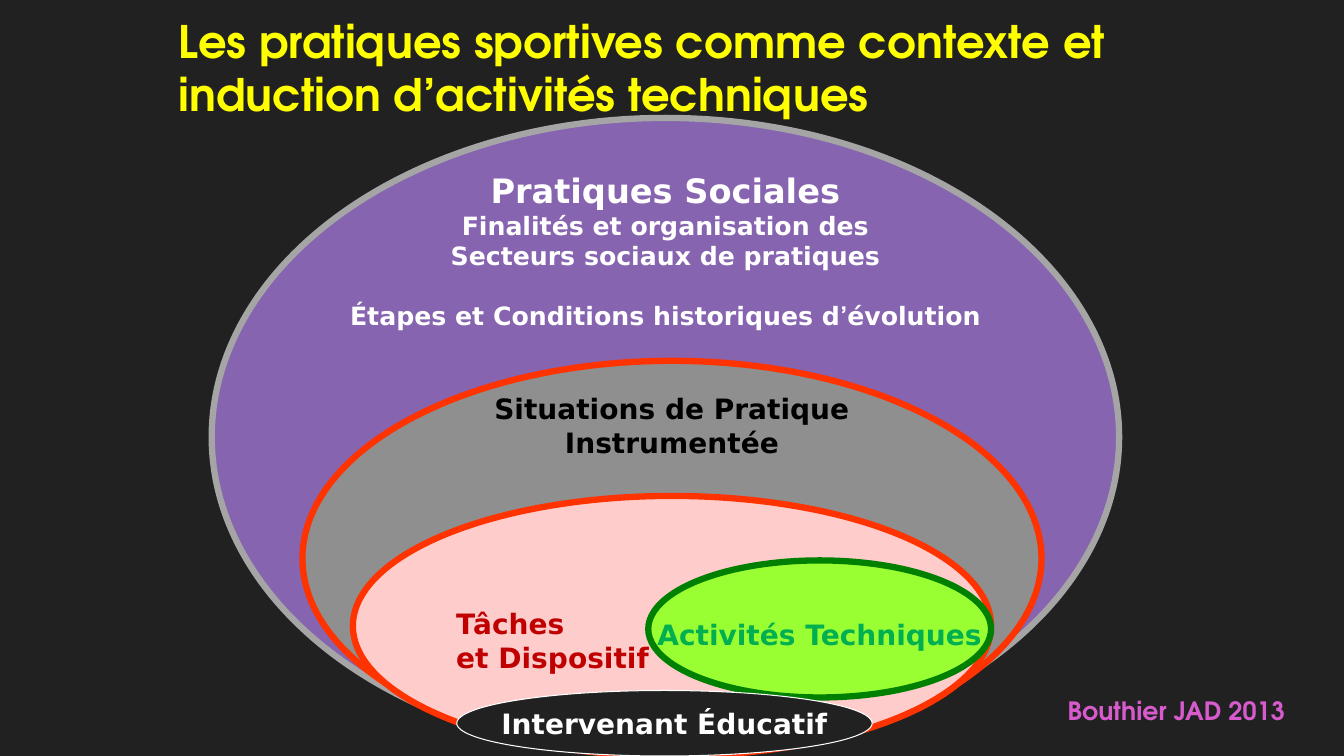
from dataclasses import dataclass

from lxml.etree import SubElement
from pptx import Presentation
from pptx.dml.color import RGBColor
from pptx.enum.shapes import MSO_SHAPE
from pptx.enum.text import MSO_ANCHOR, PP_ALIGN
from pptx.oxml.ns import qn
from pptx.util import Inches, Pt


@dataclass(frozen=True)
class Theme:
    background: str = "212121"
    title: str = "FFFF00"
    credit: str = "D75BCD"
    heading_font: str = "TeX Gyre Adventor"
    label_font: str = "DejaVu Sans"
    title_size: int = 32
    large: int = 24
    medium: int = 20
    small: int = 18
    thick: float = 4.5
    thin: float = 0.75


THEME = Theme()
TITLE = "Les pratiques sportives comme contexte et induction d’activités techniques"
CREDIT = "Bouthier JAD 2013"

# Nested ellipses, back to front. box: left, top, width, height in inches;
# text_y: height of the middle of the label; lines: text, size, space before.
ELLIPSES = [
    dict(box=(2.1, 1.17, 9, 6.33), fill="8664B0", line="A5A5A5", weight=THEME.thick,
         color="FFFFFF", align=PP_ALIGN.CENTER, text_y=2.48,
         lines=[("Pratiques Sociales", THEME.large, 0),
                ("Finalités et organisation des", THEME.small, 0),
                ("Secteurs sociaux de pratiques", THEME.small, 0),
                ("Étapes et Conditions historiques d’évolution", THEME.small, 21)]),
    dict(box=(3, 3.58, 7.33, 3.92), fill="8F8F8F", line="FF3300", weight=THEME.thick,
         color="000000", align=PP_ALIGN.CENTER, text_y=4.22,
         lines=[("Situations de Pratique", THEME.medium, 0),
                ("Instrumentée", THEME.medium, 0)]),
    dict(box=(3.5, 4.92, 6.33, 2.58), fill="FFCCCC", line="FF3300", weight=THEME.thick,
         color="C00000", align=PP_ALIGN.LEFT, text_y=6.35,
         lines=[("Tâches", THEME.medium, 0),
                ("et Dispositif", THEME.medium, 0)]),
    dict(box=(6.43, 5.56, 3.4, 1.36), fill="99FF33", line="008000", weight=THEME.thick,
         color="00B050", align=PP_ALIGN.CENTER, text_y=6.29,
         lines=[("Activités Techniques", THEME.medium, 0)]),
    dict(box=(4.53, 6.85, 4.12, 0.65), fill=THEME.background, line="FFFFFF",
         weight=THEME.thin, color="FFFFFF", align=PP_ALIGN.CENTER, text_y=7.18,
         lines=[("Intervenant Éducatif", THEME.medium, 0)]),
]


def rgb(value):
    return RGBColor.from_string(value)


def style(font, name, size, color):
    font.name, font.size, font.bold = name, Pt(size), True
    font.color.rgb = rgb(color)


def add_text_shadow(run):
    effects = SubElement(run._r.get_or_add_rPr(), qn("a:effectLst"))
    shadow = SubElement(effects, qn("a:outerShdw"), blurRad="38100",
                        dist="38100", dir="2700000", algn="tl")
    SubElement(shadow, qn("a:srgbClr"), val="000000")


def add_title(slide):
    sp = slide.shapes.title
    sp.left, sp.top, sp.width, sp.height = map(Inches, (1.67, 0, 9.5, 1.25))
    tf = sp.text_frame
    tf.text, tf.word_wrap, tf.vertical_anchor = TITLE, True, MSO_ANCHOR.BOTTOM
    p = tf.paragraphs[0]
    p.alignment = PP_ALIGN.LEFT
    style(p.runs[0].font, THEME.heading_font, THEME.title_size, THEME.title)
    add_text_shadow(p.runs[0])


def add_line(p, text, size, color):
    """Write a label line, with its apostrophe in the heading font."""
    before, mark, after = text.partition("’")
    for part in filter(None, (before, mark, after)):
        r = p.add_run()
        r.text = part
        name = THEME.heading_font if part == "’" else THEME.label_font
        style(r.font, name, size, color)


def add_ellipse(slide, item):
    sp = slide.shapes.add_shape(MSO_SHAPE.OVAL, *map(Inches, item["box"]))
    sp.shadow.inherit = False
    sp.fill.solid()
    sp.fill.fore_color.rgb = rgb(item["fill"])
    sp.line.color.rgb = rgb(item["line"])
    sp.line.width = Pt(item["weight"])

    tf = sp.text_frame
    tf.word_wrap, tf.vertical_anchor = False, MSO_ANCHOR.MIDDLE
    _, top, _, height = item["box"]
    shift = 2 * (item["text_y"] - (top + height / 2))
    tf.margin_top, tf.margin_bottom = Inches(max(shift, 0)), Inches(max(-shift, 0))
    for i, (text, size, before) in enumerate(item["lines"]):
        p = tf.add_paragraph() if i else tf.paragraphs[0]
        p.alignment = item["align"]
        if before:
            p.space_before = Pt(before)
        add_line(p, text, size, item["color"])


def add_credit(slide):
    tf = slide.shapes.add_textbox(*map(Inches, (10.49, 6.85, 2.48, 0.4))).text_frame
    tf.text, tf.word_wrap = CREDIT, True
    style(tf.paragraphs[0].font, THEME.heading_font, THEME.small, THEME.credit)


def main():
    prs = Presentation()
    prs.slide_width, prs.slide_height = Inches(13.33), Inches(7.5)
    slide = prs.slides.add_slide(prs.slide_layouts[5])
    slide.background.fill.solid()
    slide.background.fill.fore_color.rgb = rgb(THEME.background)
    add_title(slide)
    for item in ELLIPSES:
        add_ellipse(slide, item)
    add_credit(slide)
    prs.save("out.pptx")


if __name__ == "__main__":
    main()
